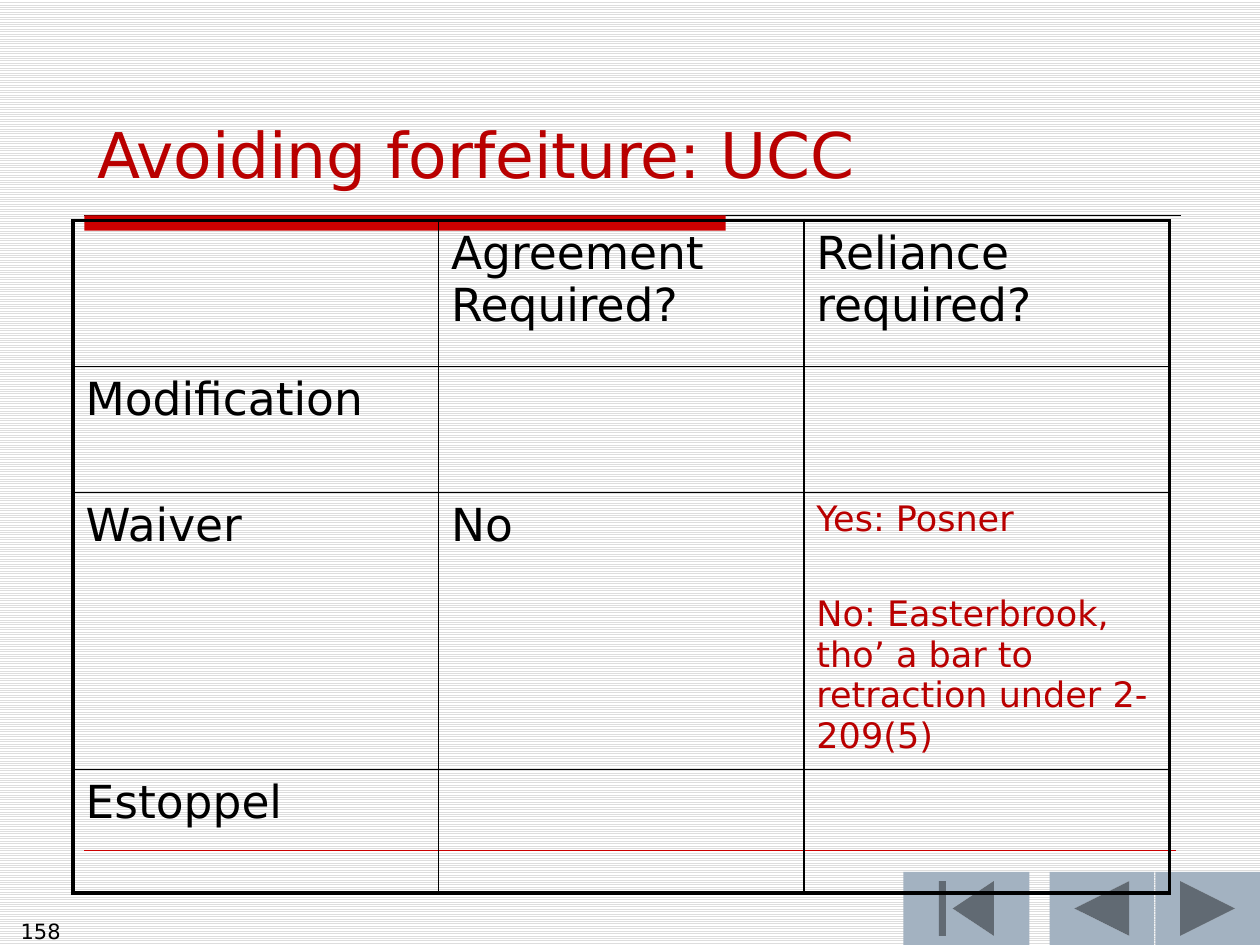
import pptx
import pptx.dml.color
import pptx.enum.dml
import pptx.enum.shapes
import pptx.enum.text
import pptx.oxml
import pptx.oxml.ns
import pptx.util
from pptx.util import Inches, Pt

FONT = "DejaVu Sans"
BLACK, DARK_RED, RED, GREY_BLUE = "000000", "B90000", "CC0000", "A3B2C1"
SHAPE = pptx.enum.shapes.MSO_SHAPE
ALIGN = pptx.enum.text.PP_ALIGN

TITLE = "Avoiding forfeiture: UCC"
PAGE_NUMBER = "158"
ROWS = [
    ["", "Agreement Required?", "Reliance required?"],
    ["Modification", "", ""],
    ["Waiver", "No",
     "Yes: Posner\nNo: Easterbrook, tho’ a bar to retraction under 2-209(5)"],
    ["Estoppel", "", ""],
]
ROW_HEIGHTS = [1.16, 1, 2.15, 0.98]
COLUMN_WIDTH = 2.9
OPINIONS = (2, 2)  # row and column of the cell in small red type
BUTTONS = [  # shape, left, width
    (SHAPE.ACTION_BUTTON_BACK_OR_PREVIOUS, 8.33, 0.83),
    (SHAPE.ACTION_BUTTON_BEGINNING, 7.17, 1),
    (SHAPE.ACTION_BUTTON_FORWARD_OR_NEXT, 9.17, 0.83),
]
RULES = [  # left, right, height on page, colour, points
    (0.67, 9.37, 1.71, BLACK, 0.75),
    (0.67, 9.33, 6.75, RED, 0.25),
]


def rgb(code):
    return pptx.dml.color.RGBColor.from_string(code)


def format_text(frame, size, color, align=ALIGN.LEFT):
    for para in frame.paragraphs:
        para.alignment = align
        for span in para.runs:
            span.font.name = FONT
            span.font.size = Pt(size)
            span.font.color.rgb = rgb(color)


def add_filled(page, kind, left, top, width, height, color):
    shape = page.shapes.add_shape(
        kind, Inches(left), Inches(top), Inches(width), Inches(height))
    shape.shadow.inherit = False
    shape.fill.solid()
    shape.fill.fore_color.rgb = rgb(color)
    shape.line.fill.background()


def add_rule(page, left, right, top, color, points):
    rule = page.shapes.add_connector(
        pptx.enum.shapes.MSO_CONNECTOR.STRAIGHT,
        Inches(left), Inches(top), Inches(right), Inches(top))
    rule.line.color.rgb = rgb(color)
    rule.line.width = Pt(points)
    properties = rule._element.spPr
    properties.append(properties.makeelement(pptx.oxml.ns.qn("a:effectLst"), {}))


def set_borders(cell, widths):
    """Draw black cell borders; widths are points for left, right, top, bottom."""
    properties = cell._tc.get_or_add_tcPr()
    for index, (side, points) in enumerate(zip("LRTB", widths)):
        properties.insert(index, pptx.oxml.parse_xml(
            f'<a:ln{side} {pptx.oxml.ns.nsdecls("a")} w="{Pt(points)}">'
            f'<a:solidFill><a:srgbClr val="{BLACK}"/></a:solidFill></a:ln{side}>'))


def add_comparison(page):
    last_row, last_column = len(ROWS) - 1, len(ROWS[0]) - 1
    table = page.shapes.add_table(
        len(ROWS), len(ROWS[0]), Inches(0.58), Inches(1.75),
        Inches(COLUMN_WIDTH * len(ROWS[0])), Inches(sum(ROW_HEIGHTS))).table
    table.first_row = table.horz_banding = False
    for column in table.columns:
        column.width = Inches(COLUMN_WIDTH)
    for r, (words, height) in enumerate(zip(ROWS, ROW_HEIGHTS)):
        table.rows[r].height = Inches(height)
        for c, text in enumerate(words):
            cell = table.cell(r, c)
            cell.text_frame.text = text
            small = (r, c) == OPINIONS
            format_text(cell.text_frame, 20 if small else 26,
                        DARK_RED if small else BLACK)
            for para in cell.text_frame.paragraphs[1:]:
                para.space_before = Pt(31)
            outer = (c == 0, c == last_column, r == 0, r == last_row)
            set_borders(cell, [2.25 if edge else 1 for edge in outer])
            cell.fill.background()


def main():
    deck = pptx.Presentation()
    deck.slide_width, deck.slide_height = Inches(10), Inches(7.5)
    page = deck.slides.add_slide(deck.slide_layouts[5])

    backdrop = page.background.fill
    backdrop.patterned()
    backdrop.pattern = pptx.enum.dml.MSO_PATTERN.LIGHT_HORIZONTAL
    backdrop.fore_color.rgb = rgb("DDDDDD")
    backdrop.back_color.rgb = rgb("FFFFFF")

    title = page.shapes.title
    title.left, title.top = Inches(0.67), Inches(0.83)
    title.width, title.height = Inches(8.33), Inches(0.71)
    title.text_frame.text = TITLE
    title.text_frame.vertical_anchor = pptx.enum.text.MSO_ANCHOR.BOTTOM
    title.text_frame.margin_bottom = Inches(0.02)
    format_text(title.text_frame, 36, DARK_RED)

    for rule in RULES:
        add_rule(page, *rule)
    add_filled(page, SHAPE.RECTANGLE, 0.67, 1.71, 5.09, 0.12, RED)
    for kind, left, width in BUTTONS:
        add_filled(page, kind, left, 6.92, width, 0.58, GREY_BLUE)

    number = page.shapes.add_textbox(
        Inches(0), Inches(7.24), Inches(0.58), Inches(0.26))
    number.text_frame.word_wrap = True
    number.text_frame.text = PAGE_NUMBER
    format_text(number.text_frame, 12, BLACK, ALIGN.RIGHT)

    add_comparison(page)
    deck.save("out.pptx")


if __name__ == "__main__":
    main()
